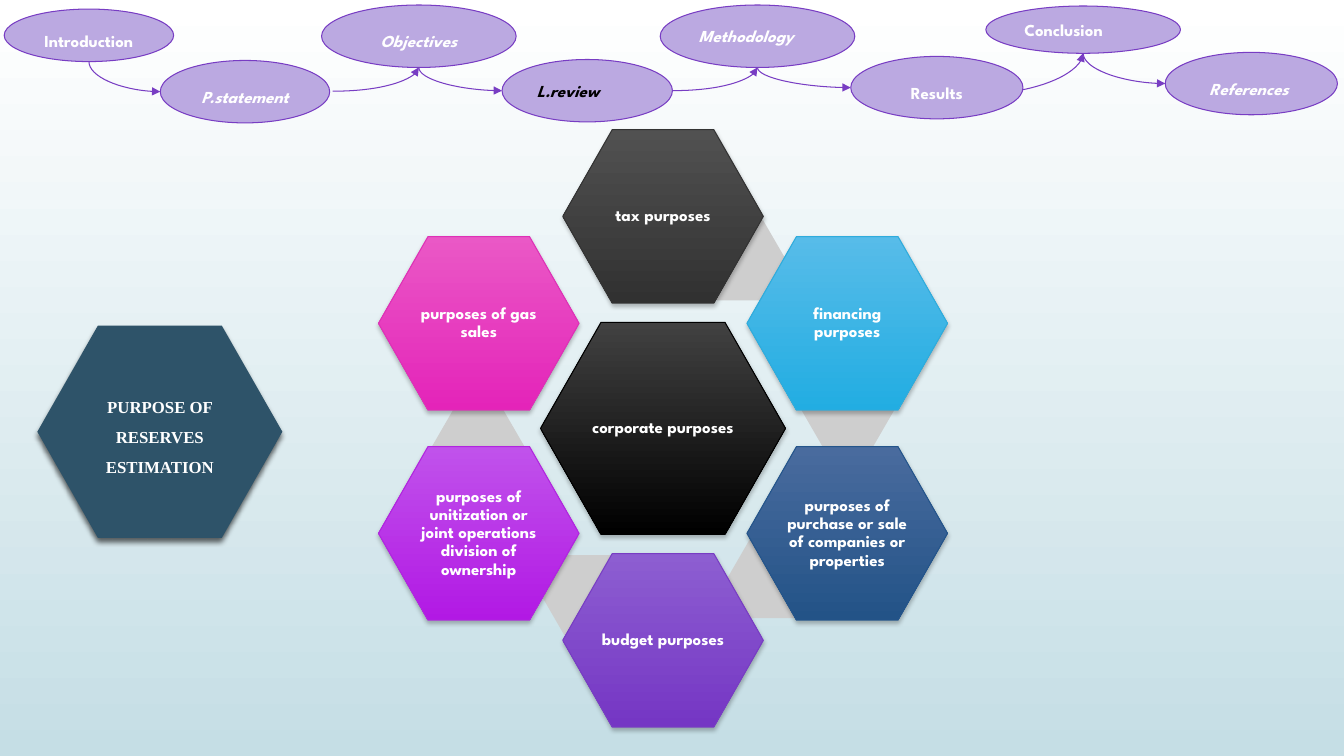
import pptx
import pptx.dml.color
import pptx.enum.shapes
import pptx.enum.text
import pptx.oxml
import pptx.oxml.ns
import pptx.util
from lxml import etree

Pt = pptx.util.Pt
SHAPES = pptx.enum.shapes.MSO_SHAPE
ALIGN = pptx.enum.text.PP_ALIGN

COLORS = {
    "white": "FFFFFF", "black": "000000", "sky": "C5DEE5",
    "step": "BBA9E1", "step_line": "783DC3", "link": "CECECE", "topic": "2E5369",
}

# text, left, top, width, height, format
STEPS = [
    ("Introduction", 3, 6.5, 121, 37.5, {}),
    ("P.statement", 114.5, 43.2, 121, 44.6, {"italic": True}),
    ("Objectives", 229.7, 3.6, 139, 44.6, {"italic": True}),
    ("L.review", 358.6, 42.5, 121.7, 44.6,
     {"italic": True, "color": COLORS["black"], "align": ALIGN.LEFT, "spacing": 1}),
    ("Methodology", 471.6, 3.6, 139, 44.6,
     {"italic": True, "align": ALIGN.LEFT, "spacing": 1}),
    ("Results", 607.7, 40.3, 123, 44.6, {}),
    ("Conclusion", 704.2, 4.3, 139, 33.8, {"align": ALIGN.LEFT, "spacing": 1}),
    ("References ", 832.3, 37.4, 123, 44.6, {"italic": True}),
]
ARROW_STARTS = {"P.statement": (237.6, 65.2), "Results": (694, 67.7)}

HUB_X, HUB_Y = 473.6, 306
HUB_SIZE = (175, 151.5)
PETAL_SIZE = (143.3, 124)
LINK_SIZE = (66.2, 57)
COLUMN, ROW, POLE = 131.6, 75, 151.4
CORNER = 0.247

HUB = ("corporate purposes", "414141", "000000", "000000")
# text, top colour, bottom colour, line colour, offset from hub, offset of grey link
PETALS = [
    ("tax purposes", "515151", "313131", "333333", (0, -POLE), (55, -120)),
    ("financing purposes", "57BCE9", "22ADE2", "2FACDC", (COLUMN, -ROW), (132, -13)),
    ("purposes of purchase or sale of companies or properties",
     "496B9E", "235387", "24558B", (COLUMN, ROW), (79, 107)),
    ("budget purposes", "8D5ED1", "7536C4", "783DC3", (0, POLE), (-54, 119)),
    ("purposes of unitization or joint operations division of ownership",
     "C052EB", "B219E4", "B125DF", (-COLUMN, ROW), (-132, 13)),
    ("purposes of gas sales", "EA58C6", "E424B9", "DE31B6", (-COLUMN, -ROW), None),
]
TOPIC = ("PURPOSE OF RESERVES ESTIMATION", 114.2, 308.4)


def rgb(value):
    return pptx.dml.color.RGBColor.from_string(value)


def fill_gradient(fill, top, bottom):
    fill.gradient()
    fill.gradient_angle = 270
    for stop, color in zip(fill.gradient_stops, (top, bottom)):
        stop.color.rgb = rgb(color)


def fill_solid(fill, color):
    fill.solid()
    fill.fore_color.rgb = rgb(color)


def set_line(line, color):
    line.width = Pt(0.75)
    fill_solid(line.fill, color)


def write_text(shape, text, font="League Spartan", color=COLORS["white"], italic=False,
               align=ALIGN.CENTER, spacing=1.5, after=0, insets=(7.2, 3.6)):
    frame = shape.text_frame
    frame.word_wrap = True
    frame.vertical_anchor = pptx.enum.text.MSO_ANCHOR.MIDDLE
    frame.margin_left = frame.margin_right = Pt(insets[0])
    frame.margin_top = frame.margin_bottom = Pt(insets[1])
    paragraph = frame.paragraphs[0]
    paragraph.alignment = align
    paragraph.line_spacing = spacing
    paragraph.space_after = Pt(after)
    run = paragraph.add_run()
    run.text = text
    run.font.name = font
    run.font.size = Pt(12)
    run.font.bold = True
    run.font.italic = italic
    run.font.color.rgb = rgb(color)


def add_shadow(shape, opacity, blur, distance):
    shape.shadow.inherit = False
    effects = shape._element.spPr.find(pptx.oxml.ns.qn("a:effectLst"))
    effects.append(pptx.oxml.parse_xml(
        f'<a:outerShdw {pptx.oxml.ns.nsdecls("a")} blurRad="{Pt(blur)}" '
        f'dist="{Pt(distance)}" dir="5400000" algn="ctr" rotWithShape="0">'
        f'<a:srgbClr val="{COLORS["black"]}"><a:alpha val="{opacity * 1000}"/>'
        '</a:srgbClr></a:outerShdw>'))


def add_hexagon(slide, center_x, center_y, size):
    width, height = size
    left, top = center_x - width / 2, center_y - height / 2
    corners = [(0, 0.5), (CORNER, 0), (1 - CORNER, 0), (1, 0.5), (1 - CORNER, 1), (CORNER, 1)]
    points = [(Pt(left + x * width), Pt(top + y * height)) for x, y in corners]
    builder = slide.shapes.build_freeform(*points[0])
    builder.add_line_segments(points[1:], close=True)
    return builder.convert_to_shape()


def add_purpose(slide, text, top_color, bottom_color, line_color, center, size, insets):
    hexagon = add_hexagon(slide, *center, size)
    fill_gradient(hexagon.fill, top_color, bottom_color)
    set_line(hexagon.line, line_color)
    add_shadow(hexagon, 25, 3, 2)
    write_text(hexagon, text, spacing=0.9, after=4.2, insets=insets)


def add_link(slide, center_x, center_y):
    width, height = LINK_SIZE
    link = slide.shapes.add_shape(SHAPES.HEXAGON, Pt(center_x - width / 2),
                                  Pt(center_y - height / 2), Pt(width), Pt(height))
    link.adjustments[0] = 0.289
    link.shadow.inherit = False
    fill_solid(link.fill, COLORS["link"])
    link.line.fill.background()


def add_arrow(slide, start, end):
    """Draw a quarter curve that is horizontal at its lower end."""
    arrow = slide.shapes.add_connector(pptx.enum.shapes.MSO_CONNECTOR.CURVE,
                                       *(Pt(value) for value in start + end))
    properties = arrow._element.spPr
    properties.find(pptx.oxml.ns.qn("a:prstGeom")).set("prst", "curvedConnector2")
    across, down = end[0] - start[0], end[1] - start[1]
    if down > 0:
        arrow.left = Pt((start[0] + end[0] - down) / 2)
        arrow.top = Pt((start[1] + end[1] - across) / 2)
        arrow.width, arrow.height = Pt(down), Pt(across)
        frame = properties.find(pptx.oxml.ns.qn("a:xfrm"))
        frame.set("rot", "16200000")
        frame.set("flipH", "1")
    set_line(arrow.line, COLORS["step_line"])
    line = properties.find(pptx.oxml.ns.qn("a:ln"))
    etree.SubElement(line, pptx.oxml.ns.qn("a:tailEnd"), type="triangle")
    etree.SubElement(properties, pptx.oxml.ns.qn("a:effectLst"))


def add_steps(slide):
    for index, (step, following) in enumerate(zip(STEPS, STEPS[1:])):
        name, left, top, width, height, _ = step
        _, next_left, next_top, next_width, next_height, _ = following
        if index % 2 == 0:
            start = (left + width / 2, top + height)
            end = (next_left, next_top + next_height / 2)
        else:
            start = ARROW_STARTS.get(name, (left + width, top + height / 2))
            end = (next_left + next_width / 2, next_top + next_height)
        add_arrow(slide, start, end)
    for text, left, top, width, height, text_format in STEPS:
        ellipse = slide.shapes.add_shape(SHAPES.FLOWCHART_CONNECTOR, Pt(left), Pt(top),
                                         Pt(width), Pt(height))
        ellipse.shadow.inherit = False
        fill_solid(ellipse.fill, COLORS["step"])
        set_line(ellipse.line, COLORS["step_line"])
        write_text(ellipse, text, **text_format)


def main():
    presentation = pptx.Presentation()
    presentation.slide_width, presentation.slide_height = Pt(960), Pt(540)
    slide = presentation.slides.add_slide(presentation.slide_layouts.get_by_name("Blank"))
    fill_gradient(slide.background.fill, COLORS["white"], COLORS["sky"])

    add_purpose(slide, *HUB, (HUB_X, HUB_Y), HUB_SIZE, (30.2, 26))
    for *look, offset, link_offset in PETALS:
        if link_offset:
            add_link(slide, HUB_X + link_offset[0], HUB_Y + link_offset[1])
        center = (HUB_X + offset[0], HUB_Y + offset[1])
        add_purpose(slide, *look, center, PETAL_SIZE, (25.2, 21.6))

    add_steps(slide)

    text, center_x, center_y = TOPIC
    topic = add_hexagon(slide, center_x, center_y, HUB_SIZE)
    fill_solid(topic.fill, COLORS["topic"])
    topic.line.fill.background()
    add_shadow(topic, 60, 4, 3)
    write_text(topic, text, font="Times New Roman", after=8, insets=(30.2, 26))

    presentation.save("out.pptx")


if __name__ == "__main__":
    main()
